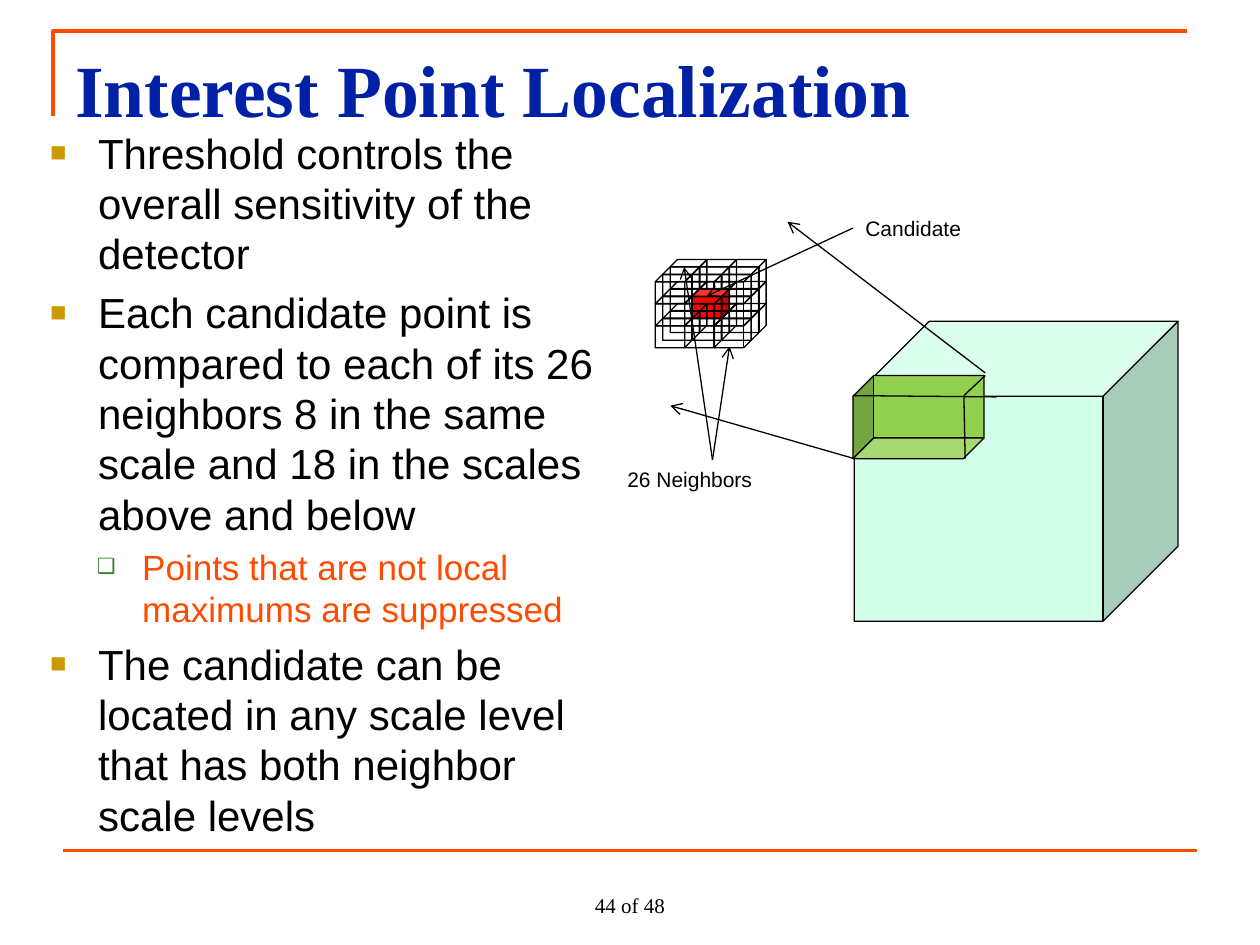
"""Build the interest point localization slide."""
from lxml import etree
from pptx import Presentation
from pptx.dml.color import RGBColor
from pptx.enum import shapes as es, text as et
from pptx.oxml import ns
from pptx.util import Inches, Pt

BLACK = RGBColor(0, 0, 0)
BLUE = RGBColor(0x00, 0x21, 0xA5)
ORANGE = RGBColor(0xFF, 0x4A, 0x00)
MINT = RGBColor(0xD1, 0xFF, 0xE8)
GREEN = RGBColor(0x92, 0xD0, 0x50)
RED = RGBColor(0xFF, 0, 0)
GOLD = RGBColor(0xCC, 0x99, 0x00)
MOSS = RGBColor(0x3B, 0x81, 0x2F)


def label(box, words, size, face="Arial", tint=BLACK, bold=False):
    item = slide.shapes.add_textbox(*map(Inches, box))
    item.text_frame.word_wrap = True
    run = item.text_frame.paragraphs[0].add_run()
    run.text = words
    run.font.size, run.font.name, run.font.bold = Pt(size), face, bold
    run.font.color.rgb = tint
    return item


def cube(home, box, fill=None):
    item = home.add_shape(es.MSO_SHAPE.CUBE, *map(Inches, box))
    item.shadow.inherit = False
    if fill is None:
        item.fill.background()
    else:
        item.fill.solid()
        item.fill.fore_color.rgb = fill
    item.line.color.rgb = BLACK
    item.line.width = Pt(0.75)
    return item


deck = Presentation()
deck.slide_width, deck.slide_height = Inches(10), Inches(7.5)
slide = deck.slides.add_slide(deck.slide_layouts[6])

edge = slide.shapes.build_freeform(Inches(0.42), Inches(0.92))
edge.add_line_segments(
    [(Inches(0.42), Inches(0.25)), (Inches(9.42), Inches(0.25))], close=False)
frame = edge.convert_to_shape()
frame.shadow.inherit = False
frame.fill.background()
frame.line.color.rgb = ORANGE
frame.line.width = Pt(2.25)

label((0.5, 0.3, 9, 1.03), "Interest Point Localization", 42,
      "Times New Roman", BLUE, True)

body = slide.shapes.add_textbox(*map(Inches, (0.3, 0.96, 4.58, 5.37))).text_frame
body.word_wrap = True
points = [
    (0, "Threshold controls the overall sensitivity of the detector"),
    (0, "Each candidate point is compared to each of its 26 neighbors "
        "8 in the same scale and 18 in the scales above and below"),
    (1, "Points that are not local maximums are suppressed"),
    (0, "The candidate can be located in any scale level that has both "
        "neighbor scale levels"),
]
looks = [(0.38, 0.38, "■", GOLD, 65, 24, BLACK),
         (0.73, 0.36, "❑", MOSS, 60, 20, ORANGE)]
for num, (level, words) in enumerate(points):
    left, hang, mark, hue, part, size, tint = looks[level]
    para = body.add_paragraph() if num else body.paragraphs[0]
    para.level = level
    if num:
        para.space_before = Pt(size * 0.2)
    props = para._p.get_or_add_pPr()
    props.set("marL", str(Inches(left)))
    props.set("indent", str(-Inches(hang)))
    shade = etree.SubElement(props, ns.qn("a:buClr"))
    etree.SubElement(shade, ns.qn("a:srgbClr")).set("val", str(hue))
    etree.SubElement(props, ns.qn("a:buSzPct")).set("val", str(part * 1000))
    etree.SubElement(props, ns.qn("a:buFont")).set("typeface", "Arial")
    etree.SubElement(props, ns.qn("a:buChar")).set("char", mark)
    run = para.add_run()
    run.text = words
    run.font.size, run.font.name = Pt(size), "Arial"
    run.font.color.rgb = tint

foot = label((4, 6.83, 2, 0.5), "44 of 48", 12, "Times New Roman")
foot.text_frame.vertical_anchor = et.MSO_ANCHOR.BOTTOM
foot.text_frame.paragraphs[0].alignment = et.PP_ALIGN.CENTER

cube(slide.shapes, (6.78, 2.55, 2.57, 2.38), MINT)
for tier in range(3):
    group = slide.shapes.add_group_shape().shapes
    for row in range(3):
        for col in range(3):
            spot = (5.32 + 0.47 * col / 2 - 0.06 * row,
                    2.06 + 0.35 * tier / 2 + 0.06 * row, 0.29, 0.23)
            cube(group, spot, RED if tier == row == col == 1 else None)
cube(slide.shapes, (6.77, 2.98, 1.04, 0.66), GREEN).rotation = 180

center = label((6.77, 1.66, 2.26, 0.3), "Candidate", 12)
near = label((4.88, 3.65, 1.55, 0.3), "26 Neighbors", 12)

lines = [
    (0.5, 6.75, 9.5, 6.75, ORANGE, 2.25, False, None, 0),
    (7.66, 3.64, 7.65, 3.14, BLACK, 0.75, False, None, 0),
    (7.82, 2.98, 7.65, 3.14, BLACK, 0.75, False, None, 0),
    (6.78, 3.64, 5.32, 3.22, BLACK, 0.75, True, None, 0),
    (7.82, 2.96, 6.25, 1.76, BLACK, 0.75, True, None, 0),
    (7.91, 3.15, 6.77, 3.14, BLACK, 0.75, False, None, 0),
    (6.77, 1.81, 5.61, 2.35, BLACK, 0.75, True, center, 1),
    (5.66, 3.65, 5.79, 2.75, BLACK, 0.75, True, near, 0),
    (5.66, 3.65, 5.43, 2.12, BLACK, 0.75, True, near, 0),
]
for *ends, tint, width, tip, source, side in lines:
    line = slide.shapes.add_connector(
        es.MSO_CONNECTOR.STRAIGHT, *map(Inches, ends))
    if source is not None:
        line.begin_connect(source, side)
    line.line.color.rgb = tint
    line.line.width = Pt(width)
    if tip:
        stroke = line.line._get_or_add_ln()
        etree.SubElement(stroke, ns.qn("a:tailEnd")).set("type", "arrow")
    etree.SubElement(line._element.spPr, ns.qn("a:effectLst"))

deck.save("out.pptx")
